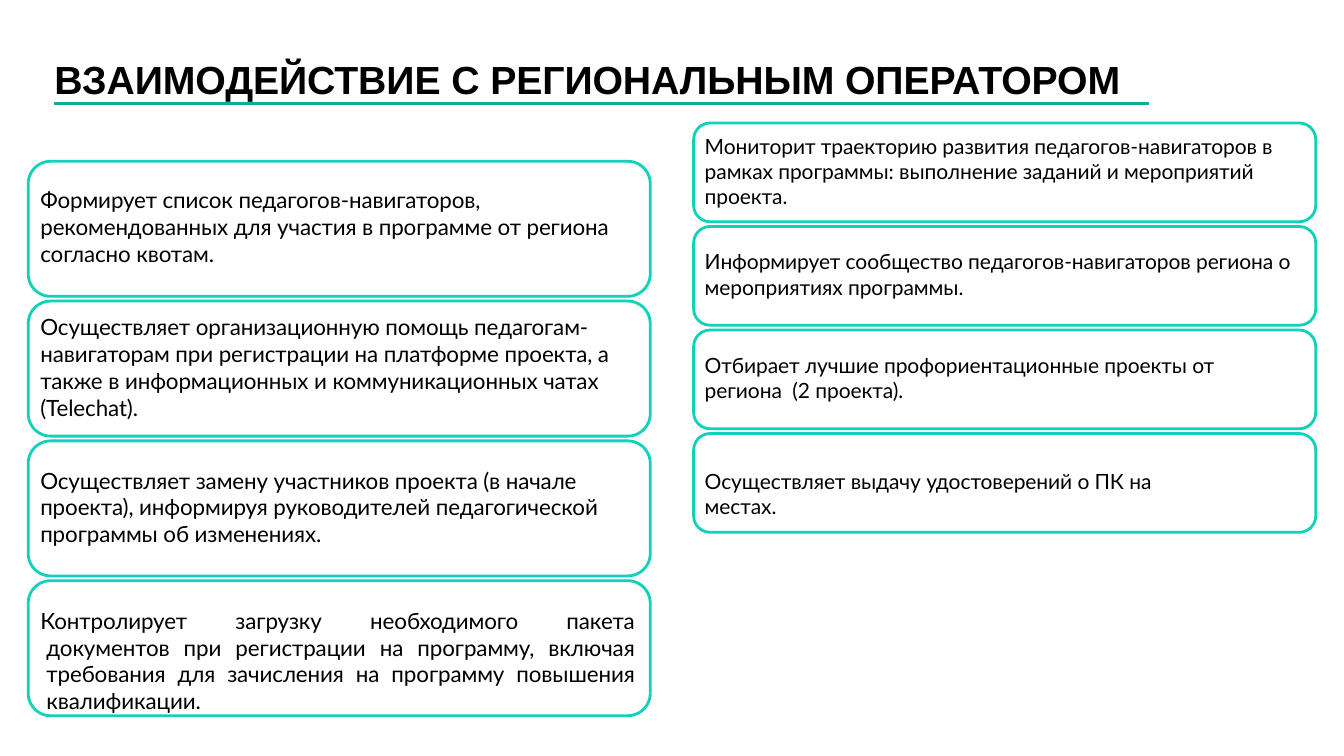
"""Build the slide on working with the regional operator."""
from pptx import Presentation
from pptx.dml.color import RGBColor
from pptx.enum import shapes, text
from pptx.util import Inches, Pt
from lxml import etree

HUES = {"ink": "000000", "frame": "12D1BA", "rule": "0FAC9B"}
LEFT = [
    (1.84, 5.72, ["Формирует список педагогов-навигаторов,",
                  "рекомендованных для участия в программе от региона",
                  "согласно квотам."]),
    (3.1, 5.71, ["Осуществляет организационную помощь педагогам-навигаторам "
                 "при регистрации на платформе проекта, а также в "
                 "информационных и коммуникационных чатах (Telechat)."]),
    (4.62, 5.6, ["Осуществляет замену участников проекта (в начале проекта), "
                 "информируя руководителей педагогической программы "
                 "об изменениях."]),
    (6.01, 5.91, ["Контролирует загрузку необходимого пакета документов "
                  "при регистрации на программу, включая требования для "
                  "зачисления на программу повышения квалификации."]),
]
RIGHT = [
    (1.31, 5.69, ["Мониторит траекторию развития педагогов-навигаторов в "
                  "рамках программы: выполнение заданий и мероприятий "
                  "проекта."]),
    (2.46, 5.9, ["Информирует сообщество педагогов-навигаторов региона о "
                 "мероприятиях программы."]),
    (3.49, 5.8, ["Отбирает лучшие профориентационные проекты от "
                 "региона  (2 проекта)."]),
    (4.64, 5.0, ["Осуществляет выдачу удостоверений о ПК на местах."]),
]
COLS = [(0.28, 1.6, 1.34, 1.387, 0.39, 16, LEFT),
        (6.88, 1.22, 0.98, 1.027, 6.98, 15, RIGHT)]


def setup(frame):
    """Clear the margins and wrap the text from the top."""
    frame.word_wrap = True
    frame.auto_size = text.MSO_AUTO_SIZE.NONE
    frame.vertical_anchor = text.MSO_ANCHOR.TOP
    frame.margin_left = frame.margin_right = frame.margin_bottom = 0
    frame.margin_top = Inches(0.01)


def write(para, words, face, size, bold=False):
    """Add one styled run to a paragraph."""
    run = para.add_run()
    run.text = words
    font = run.font
    font.name, font.size, font.bold = face, Pt(size), bold
    font.color.rgb = RGBColor.from_string(HUES["ink"])
    run._r.get_or_add_rPr().set("spc", "-5")


deck = Presentation()
deck.slide_width, deck.slide_height = Inches(13.33), Inches(7.5)
slide = deck.slides.add_slide(deck.slide_layouts[5])

title = slide.shapes.title
title.left, title.top = Inches(0.53), Inches(0.54)
title.width, title.height = Inches(10.93), Inches(0.49)
setup(title.text_frame)
head = title.text_frame.paragraphs[0]
head.alignment = text.PP_ALIGN.LEFT
head.space_before = Pt(1)
head._p.get_or_add_pPr().set("marL", str(Inches(0.01)))
write(head, "ВЗАИМОДЕЙСТВИЕ С РЕГИОНАЛЬНЫМ ОПЕРАТОРОМ", "Arial", 28, True)

rule = slide.shapes.add_connector(
    shapes.MSO_CONNECTOR.STRAIGHT,
    Inches(0.54), Inches(1.03), Inches(11.4), Inches(1.03))
rule.line.color.rgb = RGBColor.from_string(HUES["rule"])
rule.line.width = Pt(2)
etree.SubElement(
    rule._element.spPr,
    "{http://schemas.openxmlformats.org/drawingml/2006/main}effectLst")

for left, top, high, step, edge, size, items in COLS:
    for row, (start, wide, lines) in enumerate(items):
        card = slide.shapes.add_shape(
            shapes.MSO_SHAPE.ROUNDED_RECTANGLE,
            Inches(left), Inches(top + row * step), Inches(6.17), Inches(high))
        card.shadow.inherit = False
        card.fill.background()
        card.line.color.rgb = RGBColor.from_string(HUES["frame"])
        card.line.width = Pt(2)

        tall = Inches(top + row * step + high - start - 0.1)
        box = slide.shapes.add_textbox(
            Inches(edge), Inches(start), Inches(wide), tall)
        frame = box.text_frame
        setup(frame)
        for i, line in enumerate(lines):
            para = frame.add_paragraph() if i else frame.paragraphs[0]
            para.alignment = text.PP_ALIGN.LEFT
            para.space_before = Pt(0 if i else 1)
            if i:
                para.line_spacing = Pt(19.1)
            para._p.get_or_add_pPr().set("marL", str(Inches(0.01)))
            write(para, line, "Lato", size)
        if items is LEFT and row == 3:
            para.alignment = text.PP_ALIGN.JUSTIFY
            props = para._p.get_or_add_pPr()
            props.set("marL", str(Inches(0.07)))
            props.set("indent", str(Inches(-0.06)))

deck.save("out.pptx")
